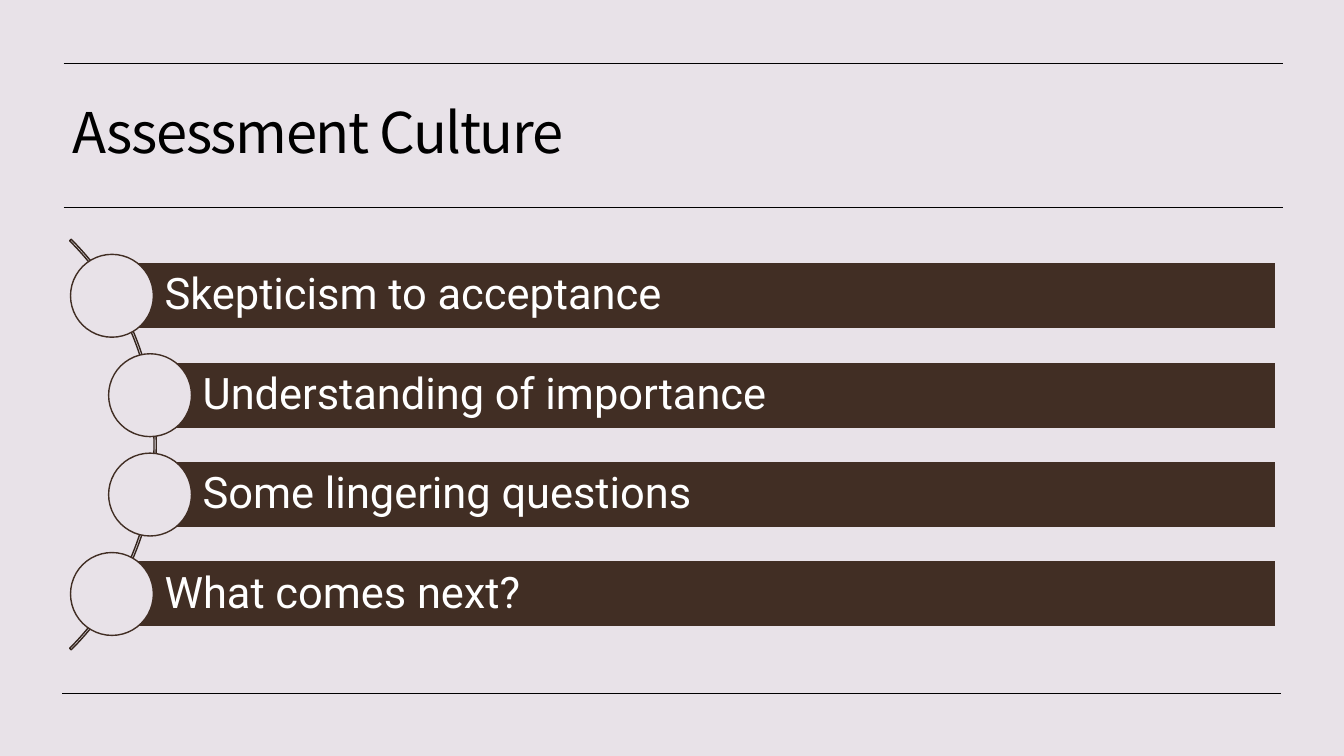
from dataclasses import dataclass

from lxml import etree
from pptx import Presentation
from pptx.dml.color import RGBColor
from pptx.enum.shapes import MSO_CONNECTOR, MSO_SHAPE
from pptx.enum.text import MSO_ANCHOR, PP_ALIGN
from pptx.oxml.ns import qn
from pptx.util import Pt

STRAIGHT = MSO_CONNECTOR.STRAIGHT
RECTANGLE, OVAL, BLOCK_ARC = MSO_SHAPE.RECTANGLE, MSO_SHAPE.OVAL, MSO_SHAPE.BLOCK_ARC
MIDDLE, LEFT = MSO_ANCHOR.MIDDLE, PP_ALIGN.LEFT
BLANK_LAYOUT = 6


@dataclass(frozen=True)
class Theme:
    background: RGBColor = RGBColor.from_string("E8E2E8")
    ink: RGBColor = RGBColor.from_string("000000")
    bar: RGBColor = RGBColor.from_string("412E24")
    arc: RGBColor = RGBColor.from_string("34251D")
    bar_text: RGBColor = RGBColor.from_string("FFFFFF")
    title_font: str = "Noto Sans CJK KR"
    body_font: str = "Roboto"
    title_size: float = 40
    body_size: float = 31
    rule_width: float = 0.5
    outline_width: float = 1


class SlideBuilder:
    """Draws elements on one slide; all lengths are in points."""

    def __init__(self, slide, theme):
        self.slide = slide
        self.theme = theme
        fill = slide.background.fill
        fill.solid()
        fill.fore_color.rgb = theme.background

    def rule(self, left, right, y):
        line = self.slide.shapes.add_connector(
            STRAIGHT, Pt(left), Pt(y), Pt(right), Pt(y))
        line.line.color.rgb = self.theme.ink
        line.line.width = Pt(self.theme.rule_width)
        etree.SubElement(line._element.spPr, qn("a:effectLst"))

    def outlined(self, kind, left, top, width, height, line_color, fill_color=None):
        shape = self.slide.shapes.add_shape(
            kind, Pt(left), Pt(top), Pt(width), Pt(height))
        shape.shadow.inherit = False
        if fill_color is None:
            shape.fill.background()
        else:
            shape.fill.solid()
            shape.fill.fore_color.rgb = fill_color
        shape.line.color.rgb = line_color
        shape.line.width = Pt(self.theme.outline_width)
        return shape

    def set_text(self, shape, text, font_name, size, color):
        """Put one left-aligned, vertically centred line of text in a shape."""
        frame = shape.text_frame
        frame.word_wrap = True
        frame.vertical_anchor = MIDDLE
        paragraph = frame.paragraphs[0]
        paragraph.text = text
        paragraph.alignment = LEFT
        paragraph.line_spacing = 0.9
        paragraph.font.name = font_name
        paragraph.font.size = Pt(size)
        paragraph.font.color.rgb = color
        return paragraph

    def title(self, text, left, top, width, height):
        box = self.slide.shapes.add_textbox(Pt(left), Pt(top), Pt(width), Pt(height))
        paragraph = self.set_text(box, text, self.theme.title_font,
                                  self.theme.title_size, self.theme.ink)
        # Tighten the letter spacing by one point
        paragraph.runs[0]._r.get_or_add_rPr().set("spc", "-100")

    def arc(self, left, top, diameter):
        """Draw the thin quarter ring that runs behind the circles."""
        arc = self.outlined(BLOCK_ARC, left, top, diameter, diameter, self.theme.arc)
        for index, value in enumerate((189, 27, 0.00375)):
            arc.adjustments[index] = value

    def bar(self, text, left, top, right, height, inset):
        bar = self.outlined(RECTANGLE, left, top, right - left, height,
                            self.theme.background, self.theme.bar)
        bar.text_frame.margin_left = Pt(inset)
        self.set_text(bar, text, self.theme.body_font,
                      self.theme.body_size, self.theme.bar_text)

    def circle(self, center_x, center_y, diameter):
        self.outlined(OVAL, center_x - diameter / 2, center_y - diameter / 2,
                      diameter, diameter, self.theme.bar, self.theme.background)


def main():
    presentation = Presentation()
    presentation.slide_width, presentation.slide_height = Pt(960), Pt(540)
    slide = presentation.slides.add_slide(presentation.slide_layouts[BLANK_LAYOUT])
    builder = SlideBuilder(slide, Theme())

    for left, right, y in ((44.6, 915.1, 495), (45.4, 916.6, 148.2), (45.4, 916.6, 45)):
        builder.rule(left, right, y)
    builder.title("Assessment Culture", 45, 54, 870, 85.7)
    builder.arc(-303.1, 110.2, 414.7)

    outer, inner = 80, 107.2
    first_top, pitch, bar_height = 187.6, 71, 47.4
    topics = (
        ("Skepticism to acceptance", outer),
        ("Understanding of importance", inner),
        ("Some lingering questions", inner),
        ("What comes next?", outer),
    )
    for row, (topic, left) in enumerate(topics):
        top = first_top + row * pitch
        builder.bar(topic, left, top, 911.6, bar_height, inset=37.6)
        builder.circle(left, top + bar_height / 2, diameter=59.2)

    presentation.save("out.pptx")


if __name__ == "__main__":
    main()
